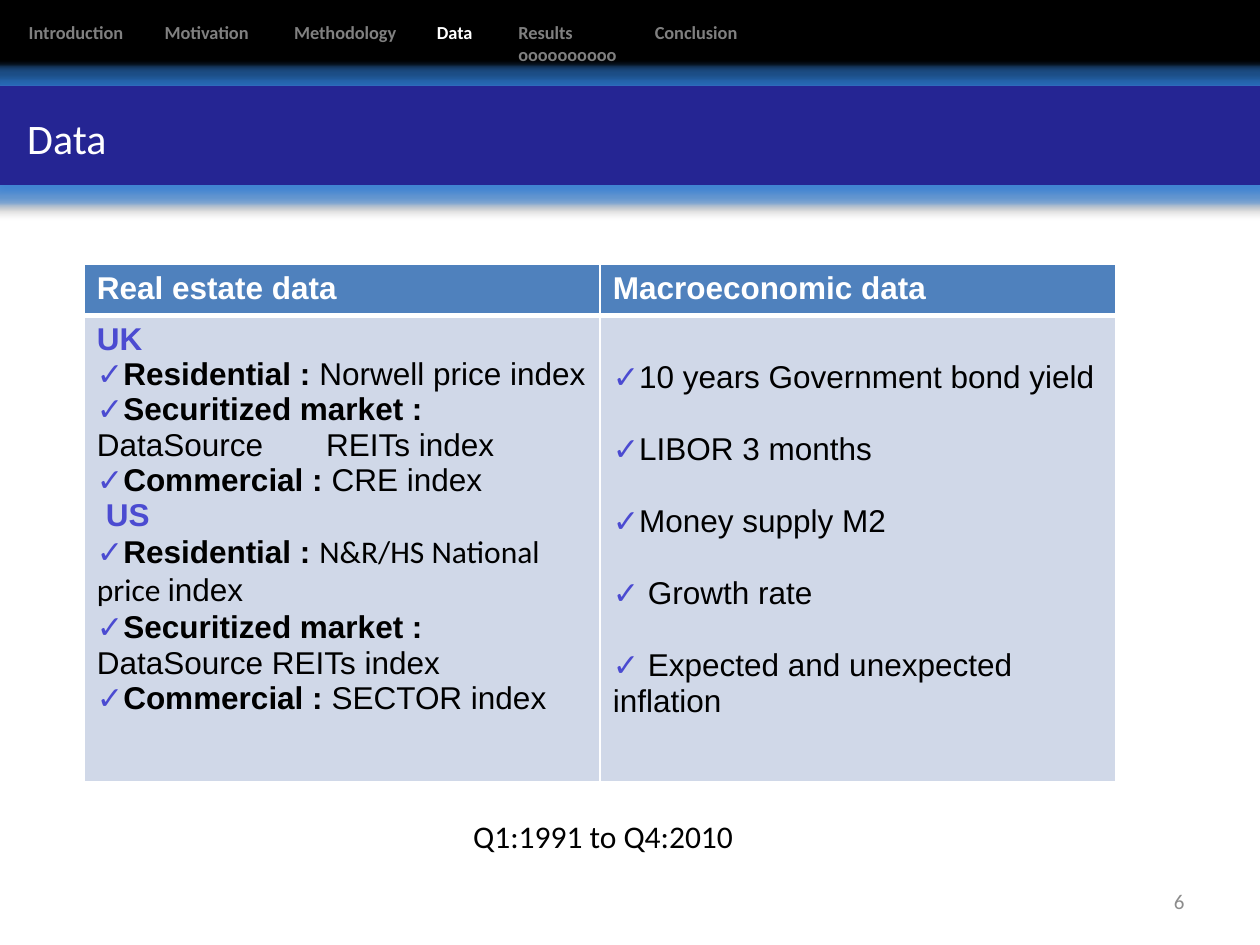
from lxml.etree import SubElement
from pptx import Presentation
from pptx.dml.color import RGBColor
from pptx.enum.shapes import MSO_SHAPE
from pptx.enum.text import MSO_ANCHOR, PP_ALIGN
from pptx.oxml import parse_xml
from pptx.oxml.ns import nsdecls, qn
from pptx.util import Cm, Pt

BLACK = RGBColor(0x00, 0x00, 0x00)
WHITE = RGBColor(0xFF, 0xFF, 0xFF)
GREY = RGBColor(0x80, 0x80, 0x80)
NUMBER_GREY = RGBColor(0x8C, 0x8C, 0x8C)
BANNER_BLUE = RGBColor(0x25, 0x25, 0x93)
HEADER_BLUE = RGBColor(0x4F, 0x81, 0xBD)
CELL_BLUE = RGBColor(0xD0, 0xD8, 0xE8)
ACCENT = RGBColor(0x4B, 0x4B, 0xD1)

SECTIONS = ["Introduction", "Motivation", "Methodology", "Data", "Results", "Conclusion"]
SECTION_TABS = [Cm(2.74), Cm(5.35), Cm(8.23), Cm(9.87), Cm(12.62)]
RESULTS_TAB = SECTION_TABS[3]
CURRENT_SECTION = "Data"

# Each market: name, left indent, then (label, [(text, font)]) per series
MARKETS = [
    ("UK", Cm(0), [
        ("Residential : ", [("Norwell price index", "Arial")]),
        ("Securitized market : ", [("DataSource\tREITs index", "Arial")]),
        ("Commercial : ", [("CRE index", "Arial")]),
    ]),
    ("US", Cm(0.18), [
        ("Residential : ", [("N&R/HS National price ", "Calibri"), ("index", "Arial")]),
        ("Securitized market : ", [("DataSource REITs index", "Arial")]),
        ("Commercial : ", [("SECTOR index", "Arial")]),
    ]),
]
MACRO_SERIES = ["10 years Government bond yield", "LIBOR 3 months", "Money supply M2",
                " Growth rate", " Expected and unexpected inflation"]


def add_run(paragraph, text, size, color, font="Calibri", bold=False):
    run = paragraph.add_run()
    run.text = text
    run.font.size = Pt(size)
    run.font.name = font
    run.font.bold = bold
    run.font.color.rgb = color


def add_tab_stops(paragraph, positions):
    tab_list = SubElement(paragraph._p.get_or_add_pPr(), qn("a:tabLst"))
    for position in positions:
        SubElement(tab_list, qn("a:tab"), pos=str(int(position)), algn="l")


def add_check_mark(paragraph):
    properties = paragraph._p.get_or_add_pPr()
    properties.set("marL", "0")
    properties.set("indent", "0")
    color = SubElement(properties, qn("a:buClr"))
    SubElement(color, qn("a:srgbClr"), val=str(ACCENT))
    SubElement(properties, qn("a:buFont"), typeface="Arial")
    SubElement(properties, qn("a:buChar"), char="✓")


def add_band(slide, top, height, color):
    band = slide.shapes.add_shape(MSO_SHAPE.RECTANGLE, Cm(0), top, Cm(25.4), height)
    band.shadow.inherit = False
    band.fill.solid()
    band.fill.fore_color.rgb = color
    band.line.fill.background()
    return band


def add_navigation(slide):
    text_frame = add_band(slide, Cm(0), Cm(1.73), BLACK).text_frame
    text_frame.margin_left = Cm(0.58)
    text_frame.vertical_anchor = MSO_ANCHOR.MIDDLE
    names = text_frame.paragraphs[0]
    names.alignment = PP_ALIGN.LEFT
    add_tab_stops(names, SECTION_TABS)
    for index, section in enumerate(SECTIONS):
        color = WHITE if section == CURRENT_SECTION else GREY
        add_run(names, ("\t" if index else "") + section, 10.5, color, bold=True)
    progress = text_frame.add_paragraph()
    progress.alignment = PP_ALIGN.LEFT
    add_tab_stops(progress, [RESULTS_TAB])
    add_run(progress, "\toooooooooo", 10.5, GREY, bold=True)


def add_banner(slide):
    """Title band with a blue glow and a soft shadow below."""
    banner = add_band(slide, Cm(1.73), Cm(2), BANNER_BLUE)
    properties = banner._element.spPr
    properties.remove(properties.find(qn("a:effectLst")))
    properties.append(parse_xml(
        f'<a:effectLst {nsdecls("a")}>'
        '<a:glow rad="101600"><a:srgbClr val="2F7FDB"><a:alpha val="60000"/></a:srgbClr></a:glow>'
        '<a:outerShdw blurRad="39370" dist="22860" dir="5400000" rotWithShape="0">'
        '<a:srgbClr val="000000"><a:alpha val="35000"/></a:srgbClr></a:outerShdw>'
        '</a:effectLst>'))


def add_text(slide, left, top, width, height, text, size, color, alignment=PP_ALIGN.LEFT):
    text_frame = slide.shapes.add_textbox(left, top, width, height).text_frame
    text_frame.word_wrap = True
    text_frame.vertical_anchor = MSO_ANCHOR.MIDDLE
    paragraph = text_frame.paragraphs[0]
    paragraph.alignment = alignment
    add_run(paragraph, text, size, color)


def format_cell(cell, color, bottom_width):
    cell.fill.solid()
    cell.fill.fore_color.rgb = color
    properties = cell._tc.get_or_add_tcPr()
    widths = {"lnL": 1, "lnR": 1, "lnT": 1, "lnB": bottom_width}
    for index, (side, width) in enumerate(widths.items()):
        properties.insert(index, parse_xml(
            f'<a:{side} {nsdecls("a")} w="{Pt(width)}"><a:solidFill>'
            f'<a:srgbClr val="{WHITE}"/></a:solidFill></a:{side}>'))


def next_paragraph(text_frame):
    """First paragraph while it is still empty, otherwise a new one."""
    first = text_frame.paragraphs[0]
    return text_frame.add_paragraph() if first.runs else first


def fill_real_estate(cell):
    for market, indent, series in MARKETS:
        heading = next_paragraph(cell.text_frame)
        heading._p.get_or_add_pPr().set("marL", str(int(indent)))
        add_run(heading, market, 18, ACCENT, "Arial", True)
        for label, parts in series:
            paragraph = next_paragraph(cell.text_frame)
            add_check_mark(paragraph)
            add_tab_stops(paragraph, [Cm(4.62)])
            add_run(paragraph, label, 18, BLACK, "Arial", True)
            for text, font in parts:
                add_run(paragraph, text, 18, BLACK, font)


def fill_macroeconomic(cell):
    cell.margin_top = Cm(0.9)
    for index, name in enumerate(MACRO_SERIES):
        paragraph = next_paragraph(cell.text_frame)
        if index:
            paragraph.space_before = Pt(21)
        add_check_mark(paragraph)
        add_run(paragraph, name, 18, BLACK, "Arial")


def add_data_table(slide):
    table = slide.shapes.add_table(2, 2, Cm(1.7), Cm(5.33), Cm(20.8), Cm(10.42)).table
    table.rows[0].height = Cm(1.03)
    table.rows[1].height = Cm(9.39)
    for column, title in enumerate(["Real estate data", "Macroeconomic data"]):
        header = table.cell(0, column)
        format_cell(header, HEADER_BLUE, 3)
        add_run(header.text_frame.paragraphs[0], title, 18, WHITE, "Arial", True)
        format_cell(table.cell(1, column), CELL_BLUE, 1)
    fill_real_estate(table.cell(1, 0))
    fill_macroeconomic(table.cell(1, 1))


def main():
    presentation = Presentation()
    presentation.slide_width = Cm(25.4)
    presentation.slide_height = Cm(19.05)
    slide = presentation.slides.add_slide(presentation.slide_layouts[6])
    add_navigation(slide)
    add_banner(slide)
    add_text(slide, Cm(0.3), Cm(2.13), Cm(10.39), Cm(1.3), "Data", 24, WHITE)
    add_text(slide, Cm(18.2), Cm(17.66), Cm(5.93), Cm(1.01), "6", 12, NUMBER_GREY,
             PP_ALIGN.RIGHT)
    add_data_table(slide)
    add_text(slide, Cm(7.16), Cm(16.34), Cm(10), Cm(1.03), "Q1:1991 to Q4:2010", 18, BLACK,
             PP_ALIGN.CENTER)
    presentation.save("out.pptx")


if __name__ == "__main__":
    main()
